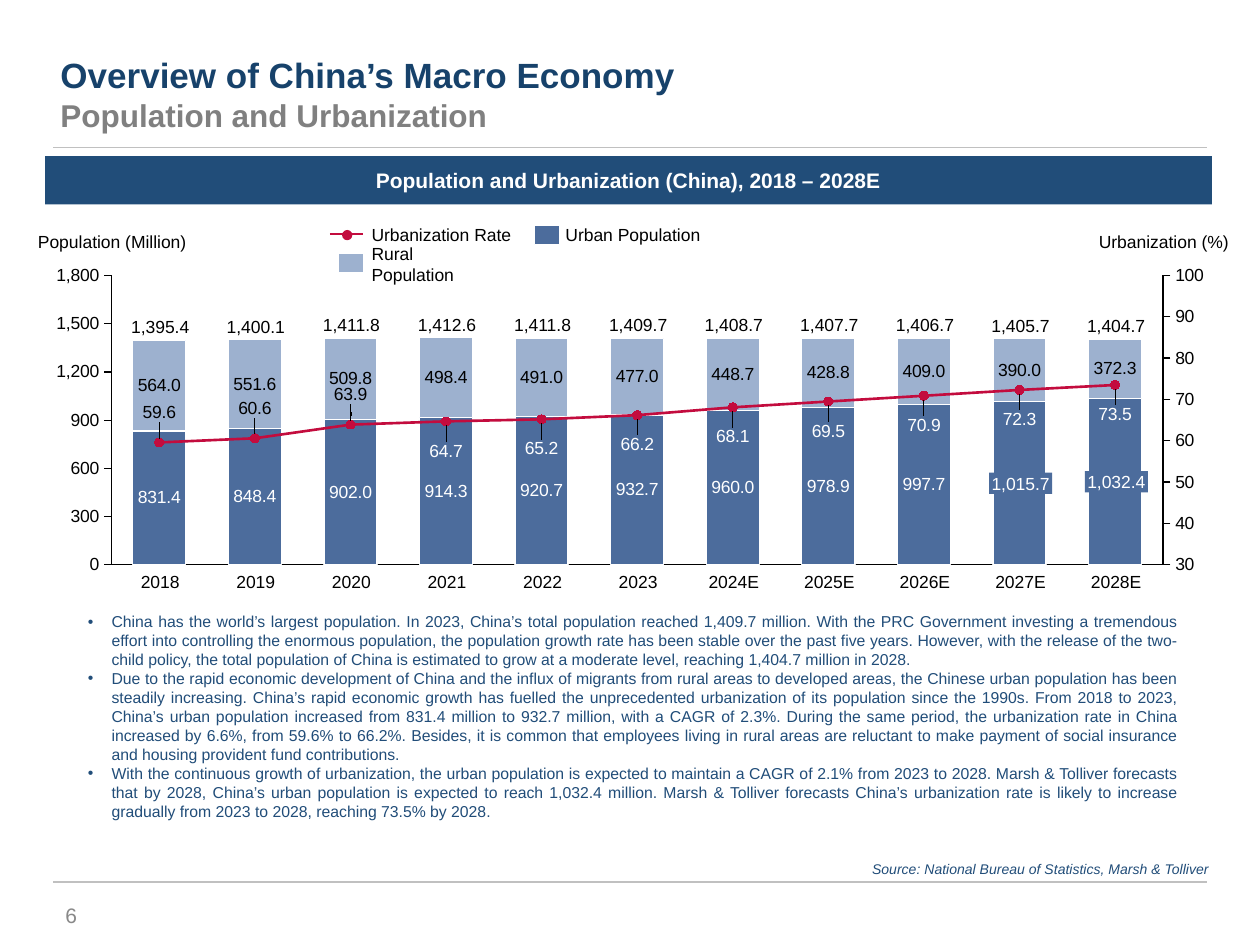
"""Build the slide on China's population and urbanization."""
from pptx import Presentation
from pptx import util as u
from pptx.chart import axis, data
from pptx.dml import color
from pptx.enum import chart as ec
from pptx.enum import shapes, text
from pptx.oxml import ns, parse_xml


class Theme:
    font, chart_font = "Arial", "Calibri"
    title, navy, grey, page = "17426B", "214D79", "808080", "898989"
    rule, black, white = "C0C0C0", "000000", "FFFFFF"
    urban, rural, rate = "4C6C9C", "9DB1CF", "C30C3E"
    title_size, subtitle_size, head_size = 20, 18, 12
    label_size, body_size, source_size = 10, 9, 8


rgb = color.RGBColor.from_string
left, center, right, justify = (text.PP_ALIGN.LEFT, text.PP_ALIGN.CENTER,
                                text.PP_ALIGN.RIGHT, text.PP_ALIGN.JUSTIFY)
top, middle, bottom = text.MSO_ANCHOR.TOP, text.MSO_ANCHOR.MIDDLE, text.MSO_ANCHOR.BOTTOM


def write(sp, words, size=Theme.label_size, ink=Theme.black, bold=False, italic=False,
          align=left, anchor=top, inset=(0, 0), wrap=False, bullet=False):
    tf = sp.text_frame
    tf.word_wrap, tf.vertical_anchor = wrap, anchor
    tf.margin_left = tf.margin_right = u.Cm(inset[0])
    tf.margin_top = tf.margin_bottom = u.Cm(inset[1])
    p = tf.add_paragraph() if tf.text else tf.paragraphs[0]
    if bullet:
        pPr = p._p.get_or_add_pPr()
        pPr.set("marL", str(u.Cm(0.48)))
        pPr.set("indent", str(-u.Cm(0.48)))
        pPr.append(parse_xml(f'<a:buFont {ns.nsdecls("a")} typeface="{Theme.font}"/>'))
        pPr.append(parse_xml(f'<a:buChar {ns.nsdecls("a")} char="•"/>'))
    p.alignment = align
    r = p.add_run()
    r.text = words
    r.font.name, r.font.size = Theme.font, u.Pt(size)
    r.font.bold, r.font.italic = bold, italic
    r.font.color.rgb = rgb(ink)


def line(x1, y1, x2, y2, ink, width):
    sp = s.shapes.add_connector(shapes.MSO_CONNECTOR.STRAIGHT, *map(u.Cm, (x1, y1, x2, y2)))
    sp.line.color.rgb, sp.line.width = rgb(ink), u.Pt(width)
    sp._element.spPr.append(parse_xml(f'<a:effectLst {ns.nsdecls("a")}/>'))


prs = Presentation()
prs.slide_width, prs.slide_height = u.Cm(25.4), u.Cm(19.05)
s = prs.slides.add_slide(prs.slide_layouts[6])

for y in (2.97, 17.78):
    line(1.07, y, 24.33, y, Theme.rule, 0.75)

sp = s.shapes.add_textbox(*map(u.Cm, (1.07, 17.83, 6.15, 1.22)))
write(sp, "6", size=Theme.head_size, ink=Theme.page, anchor=middle, inset=(0.25, 0.13), wrap=True)

sp = s.shapes.add_textbox(*map(u.Cm, (0.97, 1.04, 23.14, 1.7)))
for words, size, ink in (
    ("Overview of China’s Macro Economy", Theme.title_size, Theme.title),
    ("Population and Urbanization", Theme.subtitle_size, Theme.grey),
):
    write(sp, words, size=size, ink=ink, bold=True, anchor=middle, inset=(0.25, 0.13), wrap=True)

sp = s.shapes.add_textbox(*map(u.Cm, (17.04, 17.22, 7.59, 0.58)))
write(sp, "Source: National Bureau of Statistics, Marsh & Tolliver", size=Theme.source_size,
      ink=Theme.navy, italic=True, align=right, inset=(0.25, 0.13), wrap=True)

sp = s.shapes.add_textbox(*map(u.Cm, (1.47, 12.34, 22.56, 4.6)))
for words in (
    "China has the world’s largest population. In 2023, China’s total population reached 1,409.7 million. With the PRC Government investing a tremendous effort into controlling the enormous population, the population growth rate has been stable over the past five years. However, with the release of the two-child policy, the total population of China is estimated to grow at a moderate level, reaching 1,404.7 million in 2028.",
    "Due to the rapid economic development of China and the influx of migrants from rural areas to developed areas, the Chinese urban population has been steadily increasing. China’s rapid economic growth has fuelled the unprecedented urbanization of its population since the 1990s. From 2018 to 2023, China’s urban population increased from 831.4 million to 932.7 million, with a CAGR of 2.3%. During the same period, the urbanization rate in China increased by 6.6%, from 59.6% to 66.2%. Besides, it is common that employees living in rural areas are reluctant to make payment of social insurance and housing provident fund contributions.",
    "With the continuous growth of urbanization, the urban population is expected to maintain a CAGR of 2.1% from 2023 to 2028. Marsh & Tolliver forecasts that by 2028, China’s urban population is expected to reach 1,032.4 million. Marsh & Tolliver forecasts China’s urbanization rate is likely to increase gradually from 2023 to 2028, reaching 73.5% by 2028.",
):
    write(sp, words, size=Theme.body_size, ink=Theme.navy, align=justify,
          inset=(0.3, 0), wrap=True, bullet=True)

urban = [831.4, 848.4, 902.0, 914.3, 920.7, 932.7, 960.0, 978.9, 997.7, 1015.7, 1032.4]
rural = [564.0, 551.6, 509.8, 498.4, 491.0, 477.0, 448.7, 428.8, 409.0, 390.0, 372.3]
rate = [59.6, 60.6, 63.9, 64.7, 65.2, 66.2, 68.1, 69.5, 70.9, 72.3, 73.5]
totals = [1395.4, 1400.1, 1411.8, 1412.6, 1411.8, 1409.7, 1408.7, 1407.7, 1406.7, 1405.7, 1404.7]
years = [f"{year}E" if year > 2023 else str(year) for year in range(2018, 2029)]

cd = data.CategoryChartData(number_format="#,##0.0")
cd.categories = [str(n) for n in range(1, 12)]
for name, values in (("Urban Population", urban), ("Rural Population", rural),
                     ("Urbanization Rate", rate)):
    cd.add_series(name, values)
chart = s.shapes.add_chart(ec.XL_CHART_TYPE.COLUMN_STACKED,
                           *map(u.Cm, (0.74, 4.93, 23.95, 7.09)), cd).chart
chart.has_legend = chart.has_title = False
chart.font.name, chart.font.size = Theme.chart_font, u.Pt(Theme.label_size)
chart.font.color.rgb = rgb(Theme.black)

c = ns.nsdecls("c")
bars = chart.plots[0]
bars.gap_width, bars.overlap, bars.vary_by_categories = 80, 100, False
area = chart._chartSpace.xpath("c:chart/c:plotArea")[0]
for layout in area.xpath("c:layout"):
    area.remove(layout)
area.insert(0, parse_xml(
    f'<c:layout {c}><c:manualLayout><c:layoutTarget val="inner"/><c:xMode val="edge"/>'
    '<c:yMode val="edge"/><c:x val="0.063"/><c:y val="0.088"/><c:w val="0.885"/>'
    '<c:h val="0.823"/></c:manualLayout></c:layout>'))
ser = area.xpath("c:barChart/c:ser")[2]
for flag in ser.xpath("c:invertIfNegative"):
    ser.remove(flag)
line_chart = parse_xml(
    f'<c:lineChart {c}><c:grouping val="standard"/><c:varyColors val="0"/>'
    '<c:marker val="1"/><c:axId val="5001"/><c:axId val="5002"/></c:lineChart>')
line_chart.insert(2, ser)
area.xpath("c:barChart")[0].addnext(line_chart)
value_ax = area.xpath("c:valAx")[0]
right_ax = parse_xml(
    f'<c:valAx {c}><c:axId val="5002"/><c:scaling/><c:delete val="0"/><c:axPos val="r"/>'
    '<c:crossAx val="5001"/><c:crosses val="max"/><c:crossBetween val="between"/></c:valAx>')
value_ax.addnext(right_ax)
value_ax.addnext(parse_xml(
    f'<c:catAx {c}><c:axId val="5001"/><c:scaling/><c:delete val="1"/><c:axPos val="b"/>'
    '<c:crossAx val="5002"/><c:crosses val="autoZero"/></c:catAx>'))

for element, low, high, step in ((value_ax, 0, 1800, 300), (right_ax, 30, 100, 10)):
    ax = axis.ValueAxis(element)
    ax.minimum_scale, ax.maximum_scale, ax.major_unit = low, high, step
    ax.has_major_gridlines = False
    ax.major_tick_mark, ax.minor_tick_mark = ec.XL_TICK_MARK.OUTSIDE, ec.XL_TICK_MARK.NONE
    ax.tick_labels.number_format = '#,##0;"-"#,##0'
    ax.tick_labels.number_format_is_linked = False
    ax.tick_labels.font.name, ax.tick_labels.font.size = Theme.font, u.Pt(Theme.label_size)
    ax.tick_labels.font.color.rgb = rgb(Theme.black)
    ax.format.line.color.rgb, ax.format.line.width = rgb(Theme.black), u.Pt(0.75)
ax = chart.category_axis
ax.major_tick_mark = ec.XL_TICK_MARK.NONE
ax.tick_label_position = ec.XL_TICK_LABEL_POSITION.NONE
ax.format.line.color.rgb, ax.format.line.width = rgb(Theme.black), u.Pt(0.75)

curve = chart.plots[1].series[0]
for ser, ink in (*zip(bars.series, (Theme.white, Theme.black)), (curve, Theme.white)):
    labels = ser.data_labels
    labels.show_value = True
    labels.number_format, labels.number_format_is_linked = "#,##0.0", False
    labels.font.name, labels.font.size = Theme.font, u.Pt(Theme.label_size)
    labels.font.color.rgb = rgb(ink)
for ser, fill in zip(bars.series, (Theme.urban, Theme.rural)):
    ser.format.fill.solid()
    ser.format.fill.fore_color.rgb = rgb(fill)
    ser.format.line.color.rgb, ser.format.line.width = rgb(Theme.white), u.Pt(0.75)
    ser.data_labels.position = ec.XL_LABEL_POSITION.CENTER
urban_labels = bars.series[0].data_labels._element
for k, n in enumerate((9, 10)):
    urban_labels.insert(k, parse_xml(
        f'<c:dLbl {c}><c:idx val="{n}"/><c:delete val="1"/></c:dLbl>'))

curve.smooth = False
curve.format.line.color.rgb, curve.format.line.width = rgb(Theme.rate), u.Pt(1.5)
curve.marker.style, curve.marker.size = ec.XL_MARKER_STYLE.CIRCLE, 5
curve.marker.format.fill.solid()
curve.marker.format.fill.fore_color.rgb = rgb(Theme.rate)
curve.marker.format.line.color.rgb = rgb(Theme.rate)
for n in range(len(rate)):
    above = n < 3
    label = curve.points[n].data_label
    label.font.name, label.font.size = Theme.font, u.Pt(Theme.label_size)
    label.font.color.rgb = rgb(Theme.black if above else Theme.white)
    label.position = ec.XL_LABEL_POSITION.ABOVE if above else ec.XL_LABEL_POSITION.BELOW
    curve._element.xpath("c:dLbls/c:dLbl")[n].insert(1, parse_xml(
        f'<c:layout {c}><c:manualLayout><c:x val="0"/>'
        f'<c:y val="{-0.03 if above else 0.03}"/></c:manualLayout></c:layout>'))
curve.data_labels._element.append(parse_xml(
    f'<c:extLst {c}><c:ext uri="{{CE6537A1-D6FC-4f65-9D91-7224C49458BB}}" '
    'xmlns:c15="http://schemas.microsoft.com/office/drawing/2012/chart">'
    '<c15:showLeaderLines val="1"/></c:ext></c:extLst>'))
line(7.09, 8.31, 7.09, 8.38, Theme.black, 0.5)

for words, x, width in (("Population (Million)", 0.76, 3), ("Urbanization (%)", 22.15, 2.62)):
    sp = s.shapes.add_textbox(*map(u.Cm, (x, 4.65, width, 0.43)))
    write(sp, words, align=center, anchor=bottom)

first, last = 3.23, 22.5
for n, (year, total) in enumerate(zip(years, totals)):
    x = first + n * (last - first) / 10
    sp = s.shapes.add_textbox(*map(u.Cm, (x - 0.52, 11.51, 1.04, 0.43)))
    write(sp, year, align=center)
    y = 10.89 - 5.83 * total / 1800
    sp = s.shapes.add_textbox(*map(u.Cm, (x - 0.64, y, 1.28, 0.43)))
    write(sp, f"{total:,.1f}", align=center, anchor=bottom, inset=(0.05, 0))

line(6.65, 4.72, 7.32, 4.72, Theme.rate, 1.5)
rect, oval = shapes.MSO_SHAPE.RECTANGLE, shapes.MSO_SHAPE.OVAL
for kind, box, fill, edge, words, size in (
    (rect, (0.91, 3.15, 23.52, 0.97), Theme.navy, None,
     "Population and Urbanization (China), 2018 – 2028E", Theme.head_size),
    (rect, (19.94, 9.53, 1.27, 0.43), Theme.urban, None, "1,015.7", Theme.label_size),
    (rect, (21.87, 9.5, 1.27, 0.43), Theme.urban, None, "1,032.4", Theme.label_size),
    (rect, (6.83, 5.11, 0.51, 0.38), Theme.rural, Theme.white, "", 0),
    (rect, (10.77, 4.55, 0.51, 0.38), Theme.urban, Theme.white, "", 0),
    (oval, (6.91, 4.65, 0.18, 0.18), Theme.rate, Theme.rate, "", 0),
):
    sp = s.shapes.add_shape(kind, *map(u.Cm, box))
    sp.shadow.inherit = False
    sp.fill.solid()
    sp.fill.fore_color.rgb = rgb(fill)
    sp.line.fill.background()
    if edge:
        sp.line.color.rgb, sp.line.width = rgb(edge), u.Pt(0.75)
    if words:
        write(sp, words, size=size, ink=Theme.white, bold=size == Theme.head_size,
              align=center, anchor=middle, inset=(0.05, 0))

for words, x, y, width in (("Urbanization Rate", 7.49, 4.52, 2.82),
                           ("Rural Population", 7.49, 5.11, 2.59),
                           ("Urban Population", 11.4, 4.52, 2.72)):
    sp = s.shapes.add_textbox(*map(u.Cm, (x, y, width, 0.43)))
    write(sp, words, anchor=middle)

prs.save("out.pptx")
